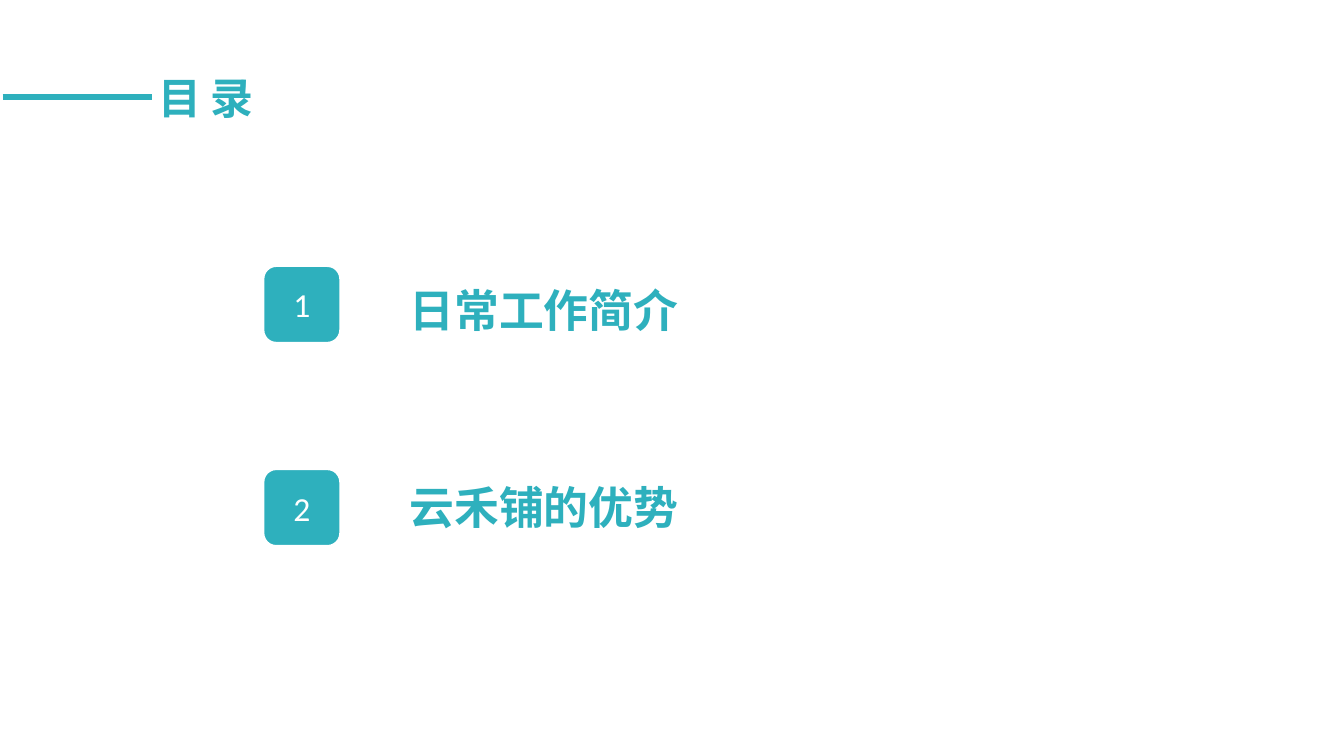
from lxml.etree import SubElement
from pptx import Presentation
from pptx.dml.color import RGBColor as Rgb
from pptx.enum.shapes import MSO_CONNECTOR as Link, MSO_SHAPE as Kind
from pptx.enum.text import MSO_ANCHOR as Anchor, MSO_AUTO_SIZE as Fit, PP_ALIGN as Align
from pptx.oxml.ns import qn
from pptx.util import Cm, Pt

HUES = {"teal": "2EB0BD", "white": "FFFFFF"}
CJK = "Noto Sans CJK SC"

# Label, top of number tile, top of label (cm)
ITEMS = [
    ("日常工作简介", 5.03, 5.21),
    ("云禾铺的优势", 8.87, 8.94),
]


def hue(name):
    return Rgb.from_string(HUES[name])


def write(frame, text, size=24, font=CJK, color="teal", bold=False,
          align=Align.LEFT):
    para = frame.paragraphs[0]
    para.alignment = align
    run = para.add_run()
    run.text = text
    run.font.size = Pt(size)
    run.font.bold = bold
    run.font.color.rgb = hue(color)
    run.font.name = font
    # East Asian glyphs need their own typeface
    SubElement(run.font._element, qn("a:ea"), typeface=CJK)


def add_text(slide, text, box, pad=None, **style):
    frame = slide.shapes.add_textbox(*map(Cm, box)).text_frame
    frame.word_wrap = False
    frame.auto_size = Fit.SHAPE_TO_FIT_TEXT
    if pad:
        frame.margin_left = frame.margin_right = Cm(pad[0])
        frame.margin_top = frame.margin_bottom = Cm(pad[1])
    write(frame, text, **style)


def add_tile(slide, text, left, top, side=1.45):
    tile = slide.shapes.add_shape(
        Kind.ROUNDED_RECTANGLE, Cm(left), Cm(top), Cm(side), Cm(side))
    tile.shadow.inherit = False
    tile.fill.solid()
    tile.fill.fore_color.rgb = hue("teal")
    tile.line.color.rgb = hue("white")
    tile.line.width = Pt(1)
    tile.text_frame.vertical_anchor = Anchor.MIDDLE
    write(tile.text_frame, text, size=18, font="Calibri", color="white",
          align=Align.CENTER)


def add_rule(slide, left, right, y):
    rule = slide.shapes.add_connector(
        Link.STRAIGHT, Cm(left), Cm(y), Cm(right), Cm(y))
    rule.line.color.rgb = hue("teal")
    rule.line.width = Pt(3)
    SubElement(rule._element.spPr, qn("a:effectLst"))


def main():
    deck = Presentation()
    deck.slide_width, deck.slide_height = Cm(25.4), Cm(14.29)
    slide = deck.slides.add_slide(deck.slide_layouts[6])

    # Heading
    add_rule(slide, 0.05, 2.87, 1.83)
    add_text(slide, "目 录", (2.84, 1.27, 2.11, 1.12), pad=(0.15, 0.08),
             size=23, font="Calibri", bold=True)

    # Numbered contents
    for num, (label, tile_y, text_y) in enumerate(ITEMS, 1):
        add_tile(slide, str(num), 4.98, tile_y)
        add_text(slide, label, (7.49, text_y, 5.64, 1.27), bold=True)

    deck.save("out.pptx")


if __name__ == "__main__":
    main()
